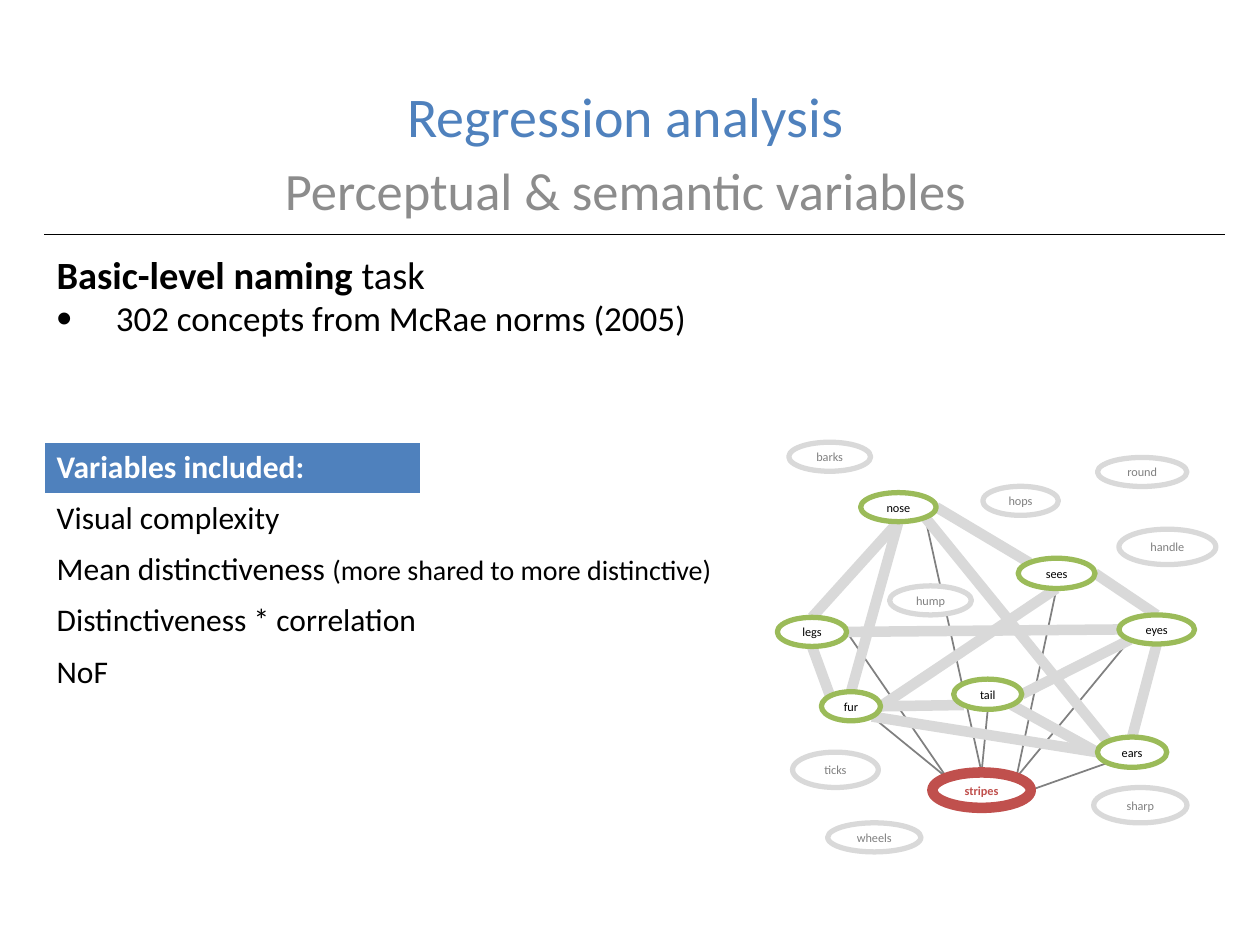
"""Build the regression analysis slide with its variable table and feature network."""
import math
from pptx import Presentation
from pptx.dml.color import RGBColor
from pptx.enum import shapes, text
from pptx.oxml.ns import qn
from pptx.util import Pt
from lxml import etree

THEME = {
    "font": "Calibri",
    "black": "000000", "white": "FFFFFF", "blue": "4F81BD", "mute": "8C8C8C",
    "gray": "808080", "pale": "D9D9D9", "green": "9BBB59", "red": "C0504D",
    "title": 32, "sub": 30, "lead": 22, "item": 20, "cell": 18, "note": 16, "node": 7,
}

TITLE = [("Regression analysis", "title", "blue"),
         ("Perceptual & semantic variables", "sub", "mute")]
BODY = [[("Basic-level naming ", "lead", True), ("task", "lead", False)],
        [("302 concepts from McRae norms (2005)", "item", False)]]
ROWS = [[("Variables included:", "cell", True)],
        [("Visual complexity", "cell", False)],
        [("Mean distinctiveness ", "cell", False),
         ("(more shared to more distinctive)", "note", False)],
        [("Distinctiveness * correlation", "cell", False)],
        [("NoF", "cell", False)]]

KINDS = {
    "key": {"line": "red", "width": 6, "ink": "red", "fill": None},
    "shared": {"line": "green", "width": 3, "ink": "black", "fill": "white"},
    "other": {"line": "pale", "width": 3, "ink": "gray", "fill": "white"},
}
NODES = {
    "key": {"stripes": (532.8, 441.4, 56.2, 20.2)},
    "shared": {
        "eyes": (639.4, 351.4, 43.2, 16.6), "sees": (581.8, 319, 43.9, 17.3),
        "ears": (627.1, 421.2, 39.6, 17.3), "fur": (469.4, 395.3, 33.8, 16.6),
        "nose": (491.8, 281.5, 43.2, 16.6), "legs": (444.2, 352.8, 39.6, 16.6),
        "tail": (545, 388.1, 38.9, 17.3)},
    "other": {
        "hump": (508.3, 334.8, 46.8, 16.6), "hops": (561.6, 277.9, 43.2, 16.6),
        "handle": (639.4, 302.4, 55.4, 20.2), "round": (627.1, 261.4, 51.1, 16.6),
        "ticks": (452.9, 429.8, 49, 20.2), "sharp": (625, 450, 53.3, 20.2),
        "wheels": (473, 470.2, 53.3, 16.6), "barks": (450.7, 252.7, 46.8, 16.6)},
}
SITES = ["top", "top left", "left", "low left", "low", "low right", "right", "top right"]
THIN = [("stripes", "top", "nose", "low right"), ("stripes", "top left", "fur", "low right"),
        ("stripes", "top left", "legs", "right"), ("stripes", "top", "tail", "low"),
        ("stripes", "top right", "sees", "low"), ("stripes", "top right", "eyes", "low left"),
        ("stripes", "right", "ears", "low left")]
THICK = [("sees", "right", "eyes", "top"), ("tail", "right", "eyes", "low left"),
         ("eyes", "low", "ears", "top"), ("tail", "low right", "ears", "left"),
         ("sees", "top left", "nose", "right"), ("legs", "low", "fur", "top left"),
         ("fur", "top", "nose", "low"), ("fur", "right", "tail", "low left"),
         ("legs", "top", "nose", "low"), ("legs", "right", "eyes", "left"),
         ("nose", "low right", "ears", "top left"), ("sees", "low", "fur", "right"),
         ("fur", "low right", "ears", "left")]
LINKS = [(THIN, "gray", 1), (THICK, "pale", 6)]


def tint(name):
    return RGBColor.from_string(THEME[name])


def style(run, size, ink, bold=False):
    run.font.name = THEME["font"]
    run.font.size = Pt(THEME[size])
    run.font.color.rgb = tint(ink)
    run.font.bold = bold


def write(para, parts, ink):
    for words, size, bold in parts:
        run = para.add_run()
        run.text = words
        style(run, size, ink, bold)


def place(shape, *box):
    shape.left, shape.top, shape.width, shape.height = map(Pt, box)


def draw_line(owner, start, end, ink, width):
    line = owner.add_connector(shapes.MSO_CONNECTOR.STRAIGHT, *map(Pt, (*start, *end)))
    line.line.color.rgb = tint(ink)
    line.line.width = Pt(width)
    etree.SubElement(line._element.spPr, qn("a:effectLst"))


def site(box, name):
    left, top, width, height = box
    turn = SITES.index(name) * math.pi / 4
    return (left + width / 2 * (1 - math.sin(turn)),
            top + height / 2 * (1 - math.cos(turn)))


def add_title(slide):
    shape = slide.shapes.title
    place(shape, 93.6, 43.2, 527.8, 323.3)
    frame = shape.text_frame
    frame.auto_size = text.MSO_AUTO_SIZE.NONE
    frame.vertical_anchor = text.MSO_ANCHOR.TOP
    frame.text = "\n".join(words for words, _, _ in TITLE)
    for index, (para, (_, size, ink)) in enumerate(zip(frame.paragraphs, TITLE)):
        para.alignment = text.PP_ALIGN.CENTER
        para.space_before = Pt(5 * index)
        style(para.runs[0], size, ink)


def add_body(slide):
    shape = slide.placeholders[1]
    place(shape, 25.2, 139.7, 374.4, 105.8)
    frame = shape.text_frame
    frame.auto_size = text.MSO_AUTO_SIZE.NONE
    for index, parts in enumerate(BODY):
        para = frame.add_paragraph() if index else frame.paragraphs[0]
        write(para, parts, "black")
        para.space_before = Pt(0)
        props = para._p.get_or_add_pPr()
        props.set("marL", str(Pt(33.8)))
        props.set("indent", str(-Pt(33.8)))
        if index:
            etree.SubElement(props, qn("a:buSzPct"), val="125000")
            etree.SubElement(props, qn("a:buFont"), typeface="Arial")
            etree.SubElement(props, qn("a:buChar"), char="•")
        else:
            etree.SubElement(props, qn("a:buNone"))


def add_table(slide):
    box = map(Pt, (25.2, 252.7, 430.6, 146.2))
    table = slide.shapes.add_table(len(ROWS), 2, *box).table
    table.first_row = table.horz_banding = False
    for index, parts in enumerate(ROWS):
        for cell in table.rows[index].cells:
            cell.fill.background()
        first = table.cell(index, 0)
        if index:
            first.merge(table.cell(index, 1))
        else:
            first.fill.solid()
            first.fill.fore_color.rgb = tint("blue")
        write(first.text_frame.paragraphs[0], parts, "black" if index else "white")


def add_node(group, name, box, kind):
    look = KINDS[kind]
    node = group.add_shape(shapes.MSO_SHAPE.OVAL, *map(Pt, box))
    node.shadow.inherit = False
    if look["fill"]:
        node.fill.solid()
        node.fill.fore_color.rgb = tint(look["fill"])
    else:
        node.fill.background()
    node.line.color.rgb = tint(look["line"])
    node.line.width = Pt(look["width"])
    frame = node.text_frame
    frame.text = name
    frame.word_wrap = False
    frame.margin_left = frame.margin_right = frame.margin_top = frame.margin_bottom = 0
    frame.vertical_anchor = text.MSO_ANCHOR.MIDDLE
    frame.paragraphs[0].alignment = text.PP_ALIGN.CENTER
    style(frame.paragraphs[0].runs[0], "node", look["ink"], kind == "key")


def add_net(slide):
    group = slide.shapes.add_group_shape().shapes
    boxes = {name: box for nodes in NODES.values() for name, box in nodes.items()}
    for links, ink, width in LINKS:
        for start, exit, end, entry in links:
            draw_line(group, site(boxes[start], exit), site(boxes[end], entry), ink, width)
    for kind, nodes in NODES.items():
        for name, box in nodes.items():
            add_node(group, name, box, kind)


def main():
    deck = Presentation()
    deck.slide_width, deck.slide_height = Pt(720), Pt(540)
    slide = deck.slides.add_slide(deck.slide_layouts[1])
    add_title(slide)
    add_table(slide)
    add_body(slide)
    draw_line(slide.shapes, (25.2, 133.9), (699.8, 133.9), "black", 0.75)
    add_net(slide)
    deck.save("out.pptx")


if __name__ == "__main__":
    main()
